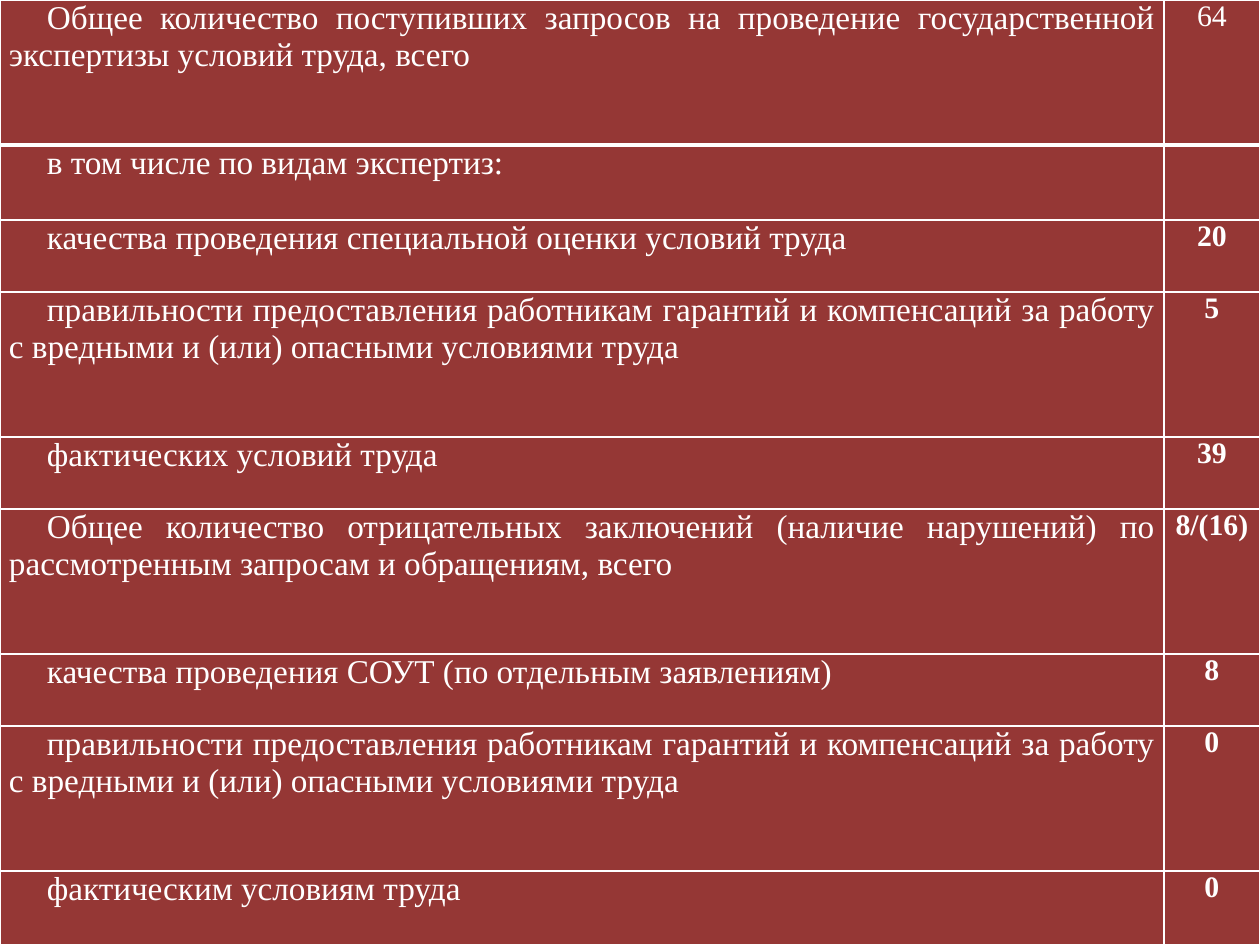
from lxml.etree import SubElement
from pptx import Presentation
from pptx.dml.color import RGBColor
from pptx.enum.text import PP_ALIGN
from pptx.oxml.ns import qn
from pptx.util import Emu, Pt

WHITE = RGBColor(0xFF, 0xFF, 0xFF)
MAROON = RGBColor(0x95, 0x37, 0x35)
FONT = "Times New Roman"
EMU_PER_PX = 914400 / 126
SLIDE_WIDTH, SLIDE_HEIGHT = 1260, 945
COLUMN_WIDTHS = (1164, 96)

GUARANTEES = ("правильности предоставления работникам гарантий и компенсаций "
              "за работу с вредными и (или) опасными условиями труда")
EXPERTISE = (
    (145, "Общее количество поступивших запросов на проведение "
          "государственной экспертизы условий труда, всего", "64"),
    (75, "в том числе по видам экспертиз:", ""),
    (72, "качества проведения специальной оценки условий труда", "20"),
    (145, GUARANTEES, "5"),
    (72, "фактических условий труда", "39"),
    (145, "Общее количество отрицательных заключений (наличие нарушений) "
          "по рассмотренным запросам и обращениям, всего", "8/(16)"),
    (72, "качества проведения СОУТ (по отдельным заявлениям)", "8"),
    (145, GUARANTEES, "0"),
    (74, "фактическим условиям труда", "0"),
)


def px(length):
    """Turn whole pixels into EMU."""
    return Emu(round(length * EMU_PER_PX))


def write_text(frame, text, size=19, bold=False, align=PP_ALIGN.JUSTIFY, indent=0):
    """Write one formatted paragraph into a text frame."""
    paragraph = frame.paragraphs[0]
    paragraph.alignment = align
    properties = paragraph._p.get_or_add_pPr()
    properties.set("marL", "0")
    properties.set("indent", str(px(indent)))
    run = paragraph.add_run()
    run.text = text
    run.font.name = FONT
    run.font.size = Pt(size)
    run.font.bold = bold
    run.font.color.rgb = WHITE


class SlideBuilder:
    """Hold the table style and the current slide."""

    def __init__(self, slide, fill=MAROON, border=WHITE):
        """Keep the slide and its colours."""
        self.slide = slide
        self.fill = fill
        self.border = border

    def style_cell(self, cell, bottom_width):
        """Set the margins, borders and fill of a cell."""
        cell.margin_left = cell.margin_right = px(9)
        cell.margin_top = cell.margin_bottom = 0
        properties = cell._tc.get_or_add_tcPr()
        for side, width in (("L", 1), ("R", 1), ("T", 1), ("B", bottom_width)):
            line = SubElement(properties, qn(f"a:ln{side}"), w=str(Pt(width)))
            solid = SubElement(line, qn("a:solidFill"))
            SubElement(solid, qn("a:srgbClr"), val=str(self.border))
        cell.fill.solid()
        cell.fill.fore_color.rgb = self.fill

    def add_table(self, rows, widths):
        """Add a table of labels and counts that fills the slide."""
        table = self.slide.shapes.add_table(
            len(rows), len(widths), 0, 0, px(SLIDE_WIDTH), px(SLIDE_HEIGHT)).table
        table.first_row = table.horz_banding = False
        for column, width in zip(table.columns, widths):
            column.width = px(width)
        for index, (height, label, count) in enumerate(rows):
            is_first = index == 0
            table.rows[index].height = px(height)
            label_cell, count_cell = table.rows[index].cells
            for cell in (label_cell, count_cell):
                self.style_cell(cell, bottom_width=3 if is_first else 1)
            write_text(label_cell.text_frame, label, indent=38)
            if count:
                write_text(count_cell.text_frame, count, size=17,
                           bold=not is_first, align=PP_ALIGN.CENTER)


def main():
    """Build and save the slide."""
    presentation = Presentation()
    presentation.slide_width = px(SLIDE_WIDTH)
    presentation.slide_height = px(SLIDE_HEIGHT)
    blank_layout = presentation.slide_layouts[6]
    builder = SlideBuilder(presentation.slides.add_slide(blank_layout))
    builder.add_table(EXPERTISE, COLUMN_WIDTHS)
    presentation.save("out.pptx")


if __name__ == "__main__":
    main()
